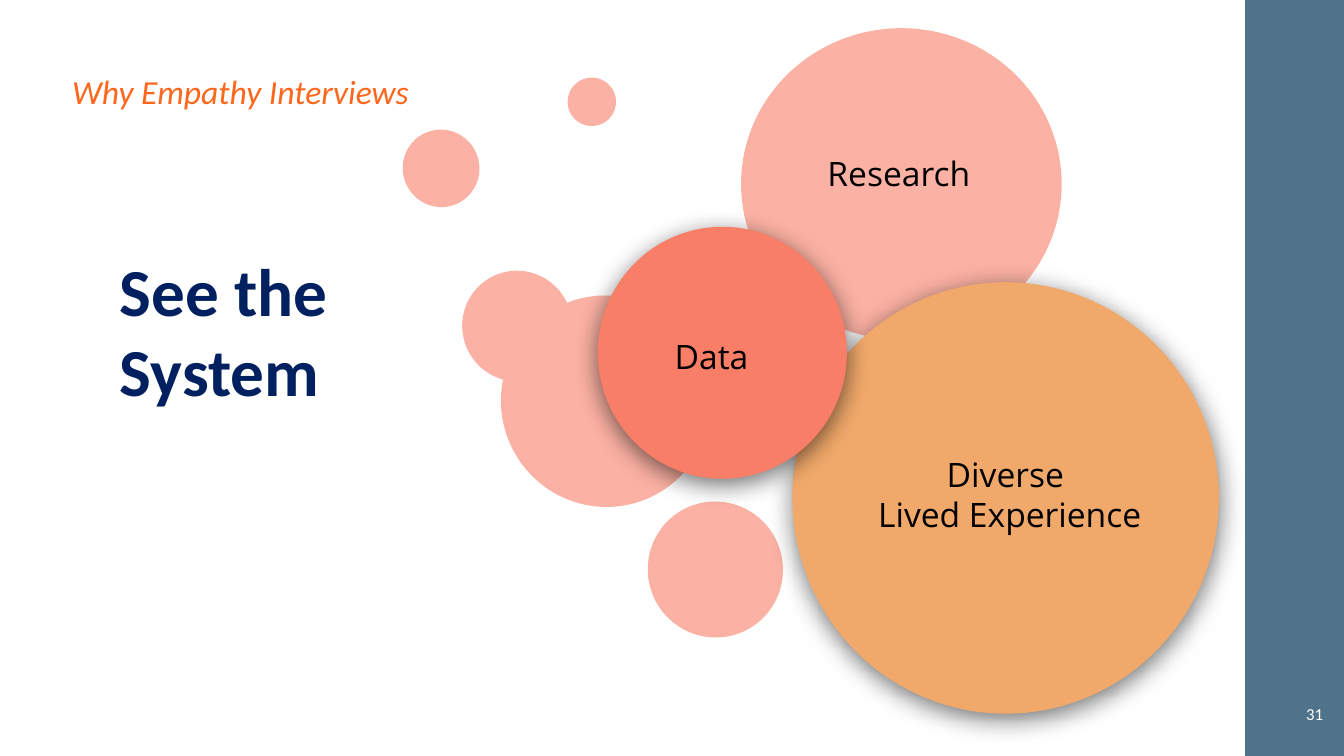
import pptx
import pptx.util
import pptx.dml.color
import pptx.enum.shapes
import pptx.enum.text
import pptx.oxml
import pptx.oxml.ns

Inches = pptx.util.Inches
Kind = pptx.enum.shapes.MSO_SHAPE
Align = pptx.enum.text.PP_ALIGN
Anchor = pptx.enum.text.MSO_ANCHOR

PINK, CORAL, ORANGE = "FBB1A3", "F97E67", "F1A96B"
SOFT_SHADOW = (
    f'<a:effectLst {pptx.oxml.ns.nsdecls("a")}>'
    f'<a:outerShdw blurRad="{pptx.util.Pt(18)}" dist="{pptx.util.Pt(4)}" dir="5400000" rotWithShape="0">'
    '<a:srgbClr val="000000"><a:alpha val="55000"/></a:srgbClr>'
    '</a:outerShdw></a:effectLst>'
)

presentation = pptx.Presentation()
presentation.slide_width = Inches(13.33)
presentation.slide_height = Inches(7.5)
slide = presentation.slides.add_slide(presentation.slide_layouts[6])


def add_filled(kind, box, fill, rotation=0, shadow=False):
    shape = slide.shapes.add_shape(kind, *map(Inches, box))
    shape.rotation = rotation
    shape.fill.solid()
    shape.fill.fore_color.rgb = pptx.dml.color.RGBColor.from_string(fill)
    shape.line.fill.background()
    if shadow:
        shape._element.spPr.append(pptx.oxml.parse_xml(SOFT_SHADOW))
    else:
        shape.shadow.inherit = False
    return shape


def add_text(text, box, fill=None, size=24, font="Open Sans", color="000000", bold=False,
             italic=False, align=Align.CENTER, anchor=Anchor.MIDDLE, inset=0.13):
    if fill:
        shape = add_filled(Kind.RECTANGLE, box, fill)
    else:
        shape = slide.shapes.add_textbox(*map(Inches, box))
    frame = shape.text_frame
    frame.word_wrap = True
    frame.vertical_anchor = anchor
    frame.margin_left = frame.margin_right = Inches(inset)
    frame.margin_top = frame.margin_bottom = Inches(min(inset, 0.13))
    frame.text = text
    for paragraph in frame.paragraphs:
        paragraph.alignment = align
        style = paragraph.runs[0].font
        style.name, style.size = font, pptx.util.Pt(size)
        style.bold, style.italic = bold, italic
        style.color.rgb = pptx.dml.color.RGBColor.from_string(color)


# Side band and headline
add_filled(Kind.RECTANGLE, (12.35, 0, 0.98, 7.5), "4E738A")
add_text("See the System", (1.06, 2.34, 2.67, 2.19), size=48, font="Calibri", color="002060",
         bold=True, align=Align.LEFT, anchor=Anchor.TOP)

# Pale bubbles
for box, rotation in [
    ((6.42, 4.98, 1.35, 1.34), 250),
    ((3.99, 1.29, 0.77, 0.76), 250),
    ((4.96, 2.94, 2.1, 2.08), 250),
    ((7.35, 0.28, 3.18, 3.09), 0),
    ((4.58, 2.69, 1.1, 1.09), 250),
    ((5.63, 0.77, 0.48, 0.48), 250),
]:
    add_filled(Kind.OVAL, box, PINK, rotation)

# Raised bubbles with their labels
for circle, fill, label, label_box in [
    ((7.86, 2.8, 4.23, 4.28), ORANGE, "Diverse \nLived Experience", (8.4, 3.88, 3.23, 2.04)),
    ((5.93, 2.25, 2.47, 2.5), CORAL, "Data ", (6.26, 2.7, 1.68, 1.66)),
]:
    add_filled(Kind.OVAL, circle, fill, shadow=True)
    add_text(label, label_box, fill)
add_text("Research", (7.3, 0.7, 3.23, 2.04))

# Page number and section title
add_text("31", (12.2, 6.8, 1.02, 0.57), size=12, font="Calibri", color="FFFFFF",
         align=Align.RIGHT, inset=0.1)
add_text("Why Empathy Interviews", (0.31, 0.65, 4.15, 0.5), size=24, font="Calibri",
         color="FF671D", italic=True, anchor=Anchor.TOP, inset=0.05)

presentation.save("out.pptx")
